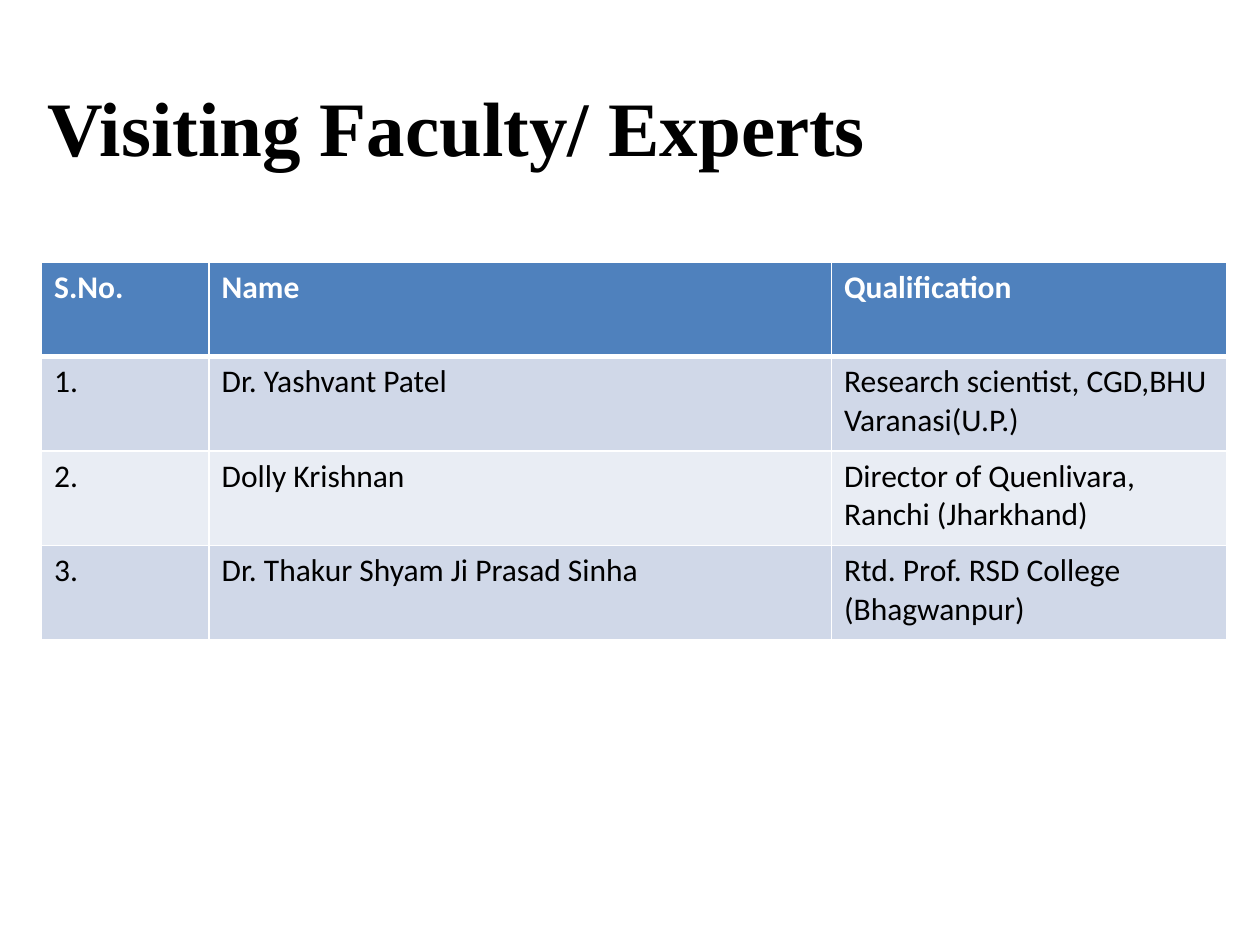
from dataclasses import dataclass

import pptx
import pptx.dml.color
import pptx.enum.text
import pptx.oxml
import pptx.oxml.ns
import pptx.presentation
import pptx.slide
import pptx.table
import pptx.text.text
import pptx.util

Inches = pptx.util.Inches
RGBColor = pptx.dml.color.RGBColor

BLACK = RGBColor(0x00, 0x00, 0x00)
WHITE = RGBColor(0xFF, 0xFF, 0xFF)
HEADER_BLUE = RGBColor(0x4F, 0x81, 0xBD)
BAND_DARK = RGBColor(0xD0, 0xD8, 0xE8)
BAND_LIGHT = RGBColor(0xE9, 0xED, 0xF4)

COLUMN_WIDTHS = (1.33, 4.94, 3.14)
ROW_HEIGHT = 0.75


@dataclass(frozen=True)
class Expert:
    name: str
    qualification: str


EXPERTS = (
    Expert("Dr. Yashvant Patel", "Research scientist, CGD,BHU\nVaranasi(U.P.)"),
    Expert("Dolly Krishnan", "Director of Quenlivara, Ranchi (Jharkhand)"),
    Expert("Dr. Thakur Shyam Ji Prasad Sinha", "Rtd. Prof. RSD College (Bhagwanpur)"),
)


def write_text(
    frame: pptx.text.text.TextFrame,
    text: str,
    *,
    size: float = 18,
    font: str = "Calibri",
    color: RGBColor = BLACK,
    bold: bool = False,
    align: pptx.enum.text.PP_ALIGN = pptx.enum.text.PP_ALIGN.LEFT,
) -> None:
    frame.word_wrap = True
    for index, line in enumerate(text.split("\n")):
        para = frame.add_paragraph() if index else frame.paragraphs[0]
        para.alignment = align
        span = para.add_run()
        span.text = line
        span.font.size = pptx.util.Pt(size)
        span.font.name = font
        span.font.bold = bold
        span.font.color.rgb = color


def set_borders(cell: pptx.table._Cell, bottom: float, top: float) -> None:
    properties = cell._tc.get_or_add_tcPr()
    widths = {"lnL": 1, "lnR": 1, "lnT": top, "lnB": bottom}
    for position, (side, width) in enumerate(widths.items()):
        line = pptx.oxml.parse_xml(
            f'<a:{side} {pptx.oxml.ns.nsdecls("a")} w="{pptx.util.Pt(width)}">'
            f'<a:solidFill><a:srgbClr val="{WHITE}"/></a:solidFill></a:{side}>'
        )
        properties.insert(position, line)


def add_expert_table(page: pptx.slide.Slide) -> None:
    rows = [("S.No.", "Name", "Qualification")]
    rows += [
        (f"{number}.", expert.name, expert.qualification)
        for number, expert in enumerate(EXPERTS, start=1)
    ]
    table = page.shapes.add_table(
        len(rows), len(COLUMN_WIDTHS), Inches(0.33), Inches(2.08),
        Inches(sum(COLUMN_WIDTHS)), Inches(ROW_HEIGHT * len(rows)),
    ).table
    for column, width in zip(table.columns, COLUMN_WIDTHS):
        column.width = Inches(width)
    for row_index, texts in enumerate(rows):
        table.rows[row_index].height = Inches(ROW_HEIGHT)
        header = row_index == 0
        band = BAND_DARK if row_index % 2 else BAND_LIGHT
        for column_index, text in enumerate(texts):
            cell = table.cell(row_index, column_index)
            cell.fill.solid()
            cell.fill.fore_color.rgb = HEADER_BLUE if header else band
            set_borders(cell, bottom=3 if header else 1, top=3 if row_index == 1 else 1)
            write_text(cell.text_frame, text, color=WHITE if header else BLACK, bold=header)


def add_title(page: pptx.slide.Slide) -> None:
    title = page.shapes.title
    title.left, title.top = Inches(0), Inches(0.5)
    title.width, title.height = Inches(7.25), Inches(1)
    title.text_frame.vertical_anchor = pptx.enum.text.MSO_ANCHOR.MIDDLE
    write_text(
        title.text_frame, "Visiting Faculty/ Experts", size=44,
        font="Times New Roman", bold=True, align=pptx.enum.text.PP_ALIGN.CENTER,
    )


def main() -> None:
    deck = pptx.Presentation()
    deck.slide_width, deck.slide_height = Inches(10), Inches(7.5)
    page = deck.slides.add_slide(deck.slide_layouts[5])
    add_title(page)
    add_expert_table(page)
    deck.save("out.pptx")


if __name__ == "__main__":
    main()
